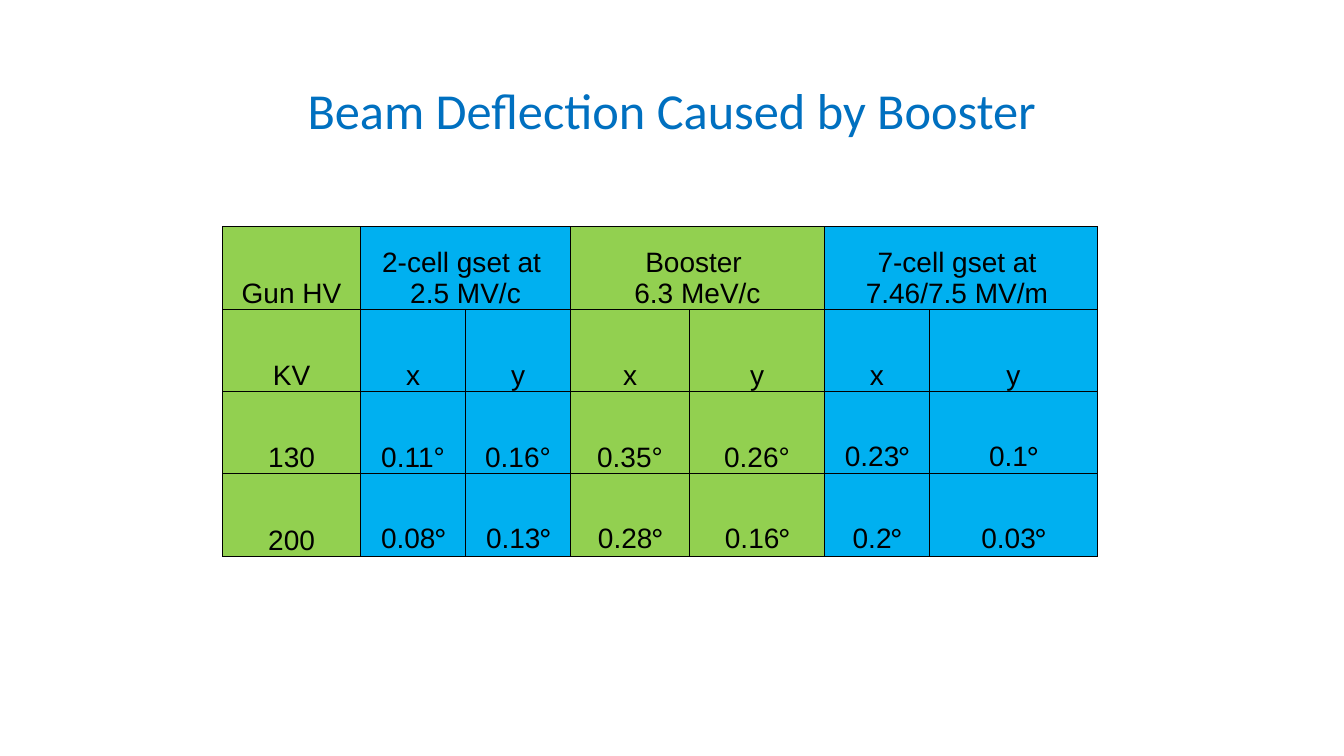
from lxml import etree
from pptx import Presentation
from pptx import util as u
from pptx.dml.color import RGBColor
from pptx.enum import text
from pptx.oxml import ns

TITLE_BLUE = RGBColor(0x00, 0x70, 0xC0)
GREEN = RGBColor(0x92, 0xD0, 0x50)
SKY = RGBColor(0x00, 0xB0, 0xF0)
BLACK = RGBColor(0, 0, 0)

COLUMN_WIDTHS = [98.6, 75, 75, 85, 96.4, 75, 120]
COLUMN_FILLS = [GREEN, SKY, SKY, GREEN, GREEN, SKY, SKY]
ROW_HEIGHT = 58.8
# "|" separates a number from a degree sign set in the second font
ROWS = [
    ["Gun HV", "2-cell gset at \n2.5 MV/c", None, "Booster \n6.3 MeV/c", None,
     "7-cell gset at \n7.46/7.5 MV/m ", None],
    ["KV", "x", "y", "x", "y", "x", "y"],
    ["130", "0.11°", "0.16°", "0.35°", "0.26°", "0.23|°", "0.1|°"],
    ["200", "0.08|°", "0.13|°", "0.28|°", "0.16|°", "0.2|°", "0.03|°"],
]


def write(frame, content, *, fonts, size, color, anchor, spacing=None):
    """Fill a text frame; lines become paragraphs, "|" switches font."""
    frame.vertical_anchor = anchor
    for index, line in enumerate(content.split("\n")):
        paragraph = frame.paragraphs[0] if index == 0 else frame.add_paragraph()
        paragraph.alignment = text.PP_ALIGN.CENTER
        if spacing:
            paragraph.line_spacing = spacing
        for part, font in zip(line.split("|"), fonts):
            run = paragraph.add_run()
            run.text = part
            run.font.name = font
            run.font.size = u.Pt(size)
            run.font.color.rgb = color


class SlideBuilder:
    title_font = "Calibri"
    table_font = "Arial"

    def __init__(self, slide):
        self.slide = slide

    def title(self, content, left, top, width, height):
        shape = self.slide.shapes.title
        shape.left, shape.top = u.Pt(left), u.Pt(top)
        shape.width, shape.height = u.Pt(width), u.Pt(height)
        shape.text_frame.auto_size = text.MSO_AUTO_SIZE.NONE
        write(shape.text_frame, content, fonts=[self.title_font], size=36,
              color=TITLE_BLUE, anchor=text.MSO_ANCHOR.MIDDLE, spacing=0.9)

    def border(self, cell):
        properties = cell._tc.get_or_add_tcPr()
        for side in ("a:lnL", "a:lnR", "a:lnT", "a:lnB"):
            line = etree.SubElement(properties, ns.qn(side), w=str(u.Pt(0.5)))
            fill = etree.SubElement(line, ns.qn("a:solidFill"))
            etree.SubElement(fill, ns.qn("a:srgbClr"), val=str(BLACK))

    def cell(self, cell, content, color):
        self.border(cell)
        cell.fill.solid()
        cell.fill.fore_color.rgb = color
        cell.margin_left = cell.margin_right = cell.margin_top = u.Pt(0.7)
        cell.margin_bottom = 0
        if content:
            write(cell.text_frame, content, size=20, color=BLACK,
                  fonts=[self.table_font, self.title_font],
                  anchor=text.MSO_ANCHOR.BOTTOM)
            cell.vertical_anchor = text.MSO_ANCHOR.BOTTOM

    def table(self, rows, left, top):
        frame = self.slide.shapes.add_table(
            len(rows), len(COLUMN_WIDTHS), u.Pt(left), u.Pt(top),
            u.Pt(sum(COLUMN_WIDTHS)), u.Pt(ROW_HEIGHT * len(rows)))
        table = frame.table
        table.first_row = table.horz_banding = False
        for column, width in zip(table.columns, COLUMN_WIDTHS):
            column.width = u.Pt(width)
        for row_index, values in enumerate(rows):
            table.rows[row_index].height = u.Pt(ROW_HEIGHT)
            for column_index, value in enumerate(values):
                cell = table.cell(row_index, column_index)
                self.cell(cell, value, COLUMN_FILLS[column_index])
                # An empty entry belongs to the heading on its left
                if value is None:
                    table.cell(row_index, column_index - 1).merge(cell)


def main():
    presentation = Presentation()
    presentation.slide_width, presentation.slide_height = u.Pt(960), u.Pt(540)
    slide = presentation.slides.add_slide(presentation.slide_layouts[5])
    builder = SlideBuilder(slide)

    # Heading
    builder.title("Beam Deflection Caused by Booster", 66, 28.8, 828, 104.4)

    # Deflection angles
    builder.table(ROWS, 159, 162)

    presentation.save("out.pptx")


if __name__ == "__main__":
    main()
